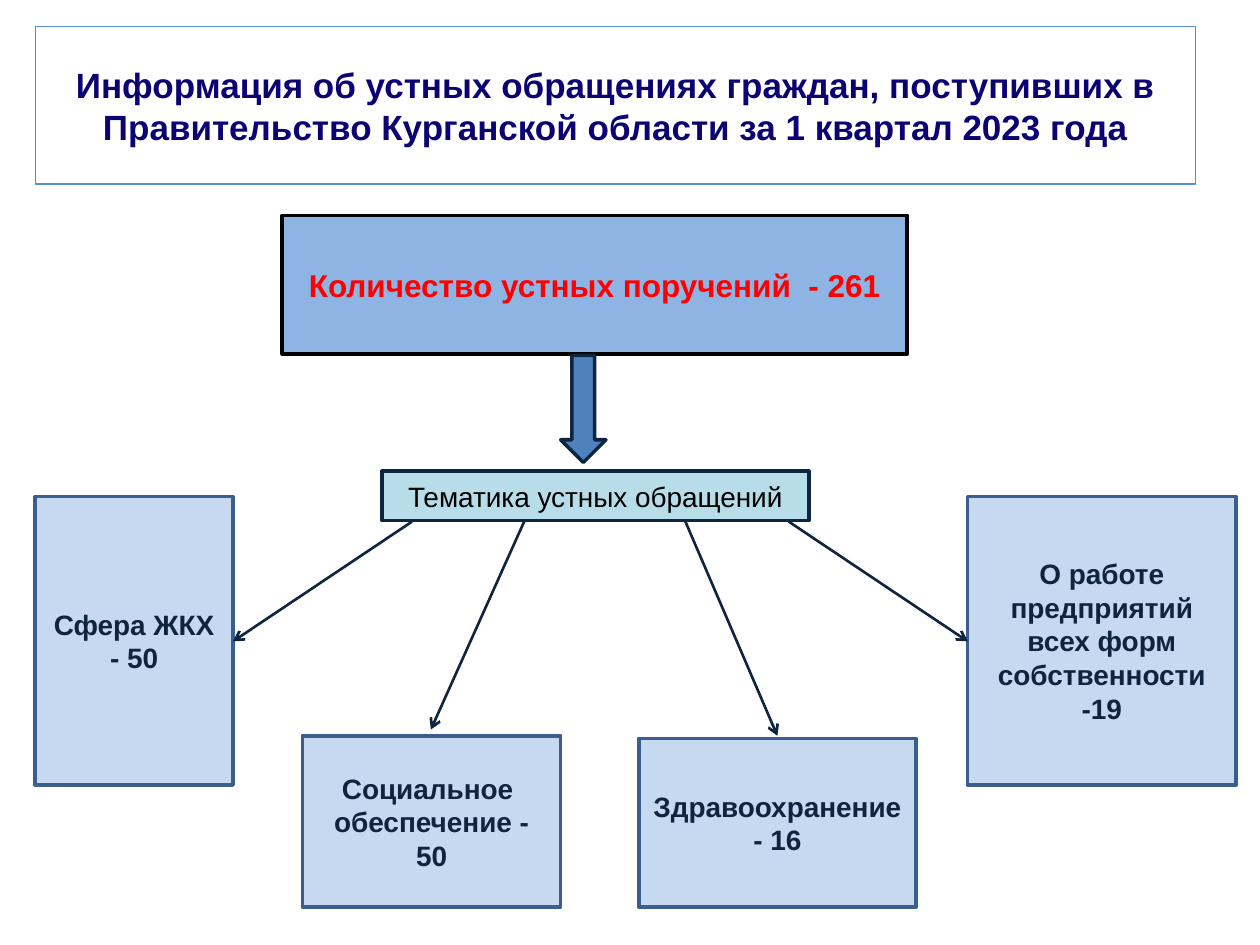
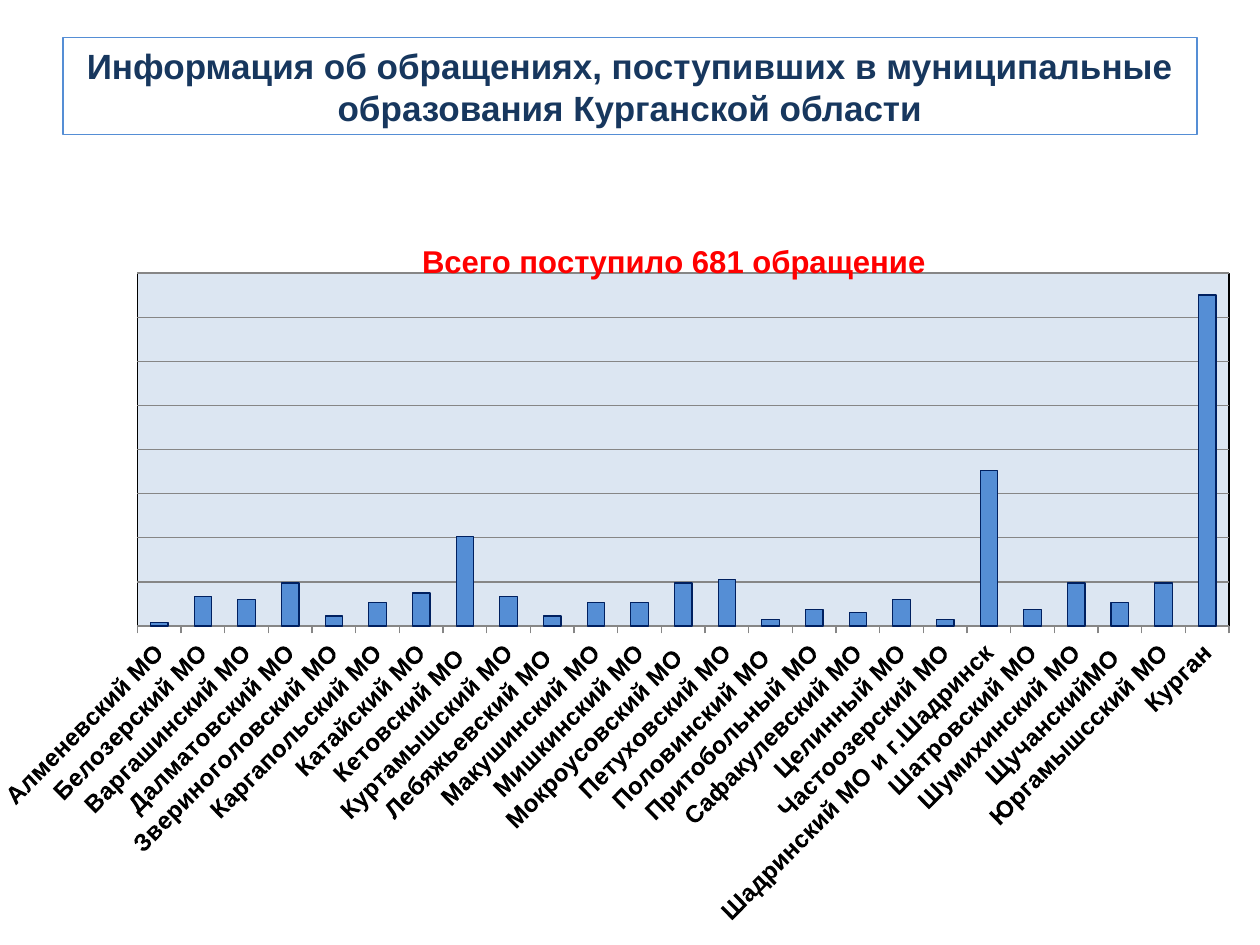
"""Build two slides on citizens' appeals in the Kurgan region."""
from dataclasses import dataclass
from typing import Optional

from pptx import Presentation
from pptx.chart.data import CategoryChartData
from pptx.dml.color import RGBColor
from pptx.enum import chart as ch, shapes, text
from pptx.oxml import parse_xml
from pptx.oxml.ns import nsdecls, qn
from pptx.util import Inches, Pt

BLACK = RGBColor(0x00, 0x00, 0x00)
RED = RGBColor(0xFF, 0x00, 0x00)
NAVY = RGBColor(0x0F, 0x24, 0x3E)
INDIGO = RGBColor(0x0B, 0x03, 0x73)
DEEP_BLUE = RGBColor(0x17, 0x37, 0x5E)
BAR_EDGE = RGBColor(0x00, 0x20, 0x60)
BLUE = RGBColor(0x55, 0x8E, 0xD5)
ARROW_BLUE = RGBColor(0x4F, 0x81, 0xBD)
TOPIC_EDGE = RGBColor(0x3A, 0x5F, 0x8C)
TOTAL_BLUE = RGBColor(0x8E, 0xB4, 0xE3)
TOPIC_BLUE = RGBColor(0xC6, 0xD9, 0xF1)
AQUA = RGBColor(0xB7, 0xDE, 0xE8)
PLOT_BLUE = RGBColor(0xDC, 0xE6, 0xF2)
GRID_GREY = RGBColor(0x86, 0x86, 0x86)
FONT = "Arial"


@dataclass(frozen=True)
class Box:
    """A bordered preset shape with optional centred text."""
    left: float
    top: float
    width: float
    height: float
    words: str = ""
    fill: Optional[RGBColor] = TOPIC_BLUE
    edge: RGBColor = TOPIC_EDGE
    edge_width: float = 2
    ink: RGBColor = NAVY
    size: float = 16
    bold: bool = True
    preset: shapes.MSO_SHAPE = shapes.MSO_SHAPE.RECTANGLE


@dataclass(frozen=True)
class Arrow:
    """A straight arrow between two points."""
    from_x: float
    from_y: float
    to_x: float
    to_y: float


TOPICS = [
    Box(0.28, 3.94, 1.57, 2.29, "Сфера ЖКХ - 50"),
    Box(2.4, 5.84, 2.05, 1.36, "Социальное  обеспечение - 50"),
    Box(5.07, 5.86, 2.2, 1.34, "Здравоохранение - 16"),
    Box(7.68, 3.94, 2.13, 2.29, "О работе предприятий всех форм собственности -19"),
]
TOTAL = Box(2.24, 1.71, 4.96, 1.1, "Количество устных поручений  - 261",
            TOTAL_BLUE, BLACK, ink=RED, size=18)
SUBJECT = Box(3.03, 3.74, 3.39, 0.39, "Тематика устных обращений",
              AQUA, NAVY, ink=BLACK, bold=False)
DOWN = Box(4.45, 2.82, 0.36, 0.85, fill=ARROW_BLUE, edge=NAVY,
           preset=shapes.MSO_SHAPE.DOWN_ARROW)
ARROWS = [
    Arrow(4.16, 4.14, 3.42, 5.79),
    Arrow(5.44, 4.14, 6.17, 5.84),
    Arrow(3.27, 4.14, 1.85, 5.09),
    Arrow(6.26, 4.14, 7.68, 5.09),
]
APPEALS = {
    "Алменевский МО": 1, "Белозерский МО": 9, "Варгашинский МО": 8,
    "Далматовский МО": 13, "Звериноголовский МО": 3, "Каргапольский МО": 7,
    "Катайский МО": 10, "Кетовский МО ": 27, "Куртамышский МО": 9,
    "Лебяжьевский МО ": 3, "Макушинский МО": 7, "Мишкинский МО": 7,
    "Мокроусовский МО ": 13, "Петуховский МО": 14, "Половинский МО ": 2,
    "Притобольный МО": 5, "Сафакулевский МО": 4, "Целинный МО": 8,
    "Частоозерский МО": 2, "Шадринский МО и г.Шадринск": 47,
    "Шатровский МО": 5, "Шумихинский МО": 13, "ЩучанскийМО ": 7,
    "Юргамышсский МО": 13, "Курган": 100,
}
GRID_STEP = 13.33
GRID_ROWS = 8


def apply(target, **values) -> None:
    """Set each named attribute on the target."""
    for name, value in values.items():
        setattr(target, name, value)


def style_font(font, size: float, ink: RGBColor, bold: bool, name: str = FONT) -> None:
    """Apply typeface, size, weight and colour."""
    apply(font, name=name, size=Pt(size), bold=bold)
    font.color.rgb = ink


def style_line(line, color: RGBColor, width: float) -> None:
    """Apply line colour and width."""
    line.color.rgb = color
    line.width = Pt(width)


def draw_box(slide, box: Box) -> None:
    """Draw a box with its text."""
    shape = slide.shapes.add_shape(
        box.preset, *map(Inches, (box.left, box.top, box.width, box.height)))
    shape.shadow.inherit = False
    style_line(shape.line, box.edge, box.edge_width)
    if box.fill is None:
        shape.fill.background()
    else:
        shape.fill.solid()
        shape.fill.fore_color.rgb = box.fill
    if box.words:
        frame = shape.text_frame
        apply(frame, word_wrap=True, vertical_anchor=text.MSO_ANCHOR.MIDDLE)
        paragraph = frame.paragraphs[0]
        paragraph.alignment = text.PP_ALIGN.CENTER
        run = paragraph.add_run()
        run.text = box.words
        style_font(run.font, box.size, box.ink, box.bold)


def draw_title(slide, words: str, ink: RGBColor, left: float, top: float,
               width: float, height: float) -> None:
    """Draw the outlined slide title."""
    draw_box(slide, Box(left, top, width, height, words, None, BLUE, 0.75, ink, 20))


def draw_arrow(slide, arrow: Arrow) -> None:
    """Draw a connector with an open arrowhead at its end."""
    ends = map(Inches, (arrow.from_x, arrow.from_y, arrow.to_x, arrow.to_y))
    connector = slide.shapes.add_connector(shapes.MSO_CONNECTOR.STRAIGHT, *ends)
    style_line(connector.line, NAVY, 1.5)
    properties = connector.element.spPr
    properties.find(qn("a:ln")).append(
        parse_xml(f'<a:tailEnd {nsdecls("a")} type="arrow"/>'))
    properties.append(parse_xml(f'<a:effectLst {nsdecls("a")}/>'))


def place(element, index: int, **values: object) -> None:
    """Give a chart part a manual layout as its child at the index."""
    for old in element.findall(qn("c:layout")):
        element.remove(old)
    settings = "".join(f'<c:{key} val="{value}"/>' for key, value in values.items())
    element.insert(index, parse_xml(
        f'<c:layout {nsdecls("c")}><c:manualLayout>{settings}</c:manualLayout></c:layout>'))


def draw_chart(slide) -> None:
    """Draw the column chart of appeals by municipality."""
    data = CategoryChartData()
    data.categories = list(APPEALS)
    data.add_series("Series 1", list(APPEALS.values()))
    chart = slide.shapes.add_chart(
        ch.XL_CHART_TYPE.COLUMN_CLUSTERED,
        *map(Inches, (0, 1.62, 9.76, 6.09)), data).chart
    apply(chart, has_legend=False, has_title=True)
    style_font(chart.font, 18, BLACK, False, "Calibri")

    heading = chart.chart_title.text_frame.paragraphs[0].add_run()
    heading.text = "Всего поступило 681 обращение "
    style_font(heading.font, 18, RED, True)

    municipalities = chart.category_axis
    municipalities.major_tick_mark = ch.XL_TICK_MARK.OUTSIDE
    style_font(municipalities.tick_labels.font, 14, BLACK, True)
    style_line(municipalities.format.line, GRID_GREY, 0.75)

    counts = chart.value_axis
    apply(counts, visible=False, has_major_gridlines=True, minimum_scale=0,
          maximum_scale=GRID_STEP * GRID_ROWS, major_unit=GRID_STEP)
    style_line(counts.major_gridlines.format.line, GRID_GREY, 0.75)

    plot = chart.plots[0]
    apply(plot, gap_width=150, vary_by_categories=False)
    bars = plot.series[0].format
    bars.fill.solid()
    bars.fill.fore_color.rgb = BLUE
    style_line(bars.line, BAR_EDGE, 0.75)

    root = chart.element.find(qn("c:chart"))
    area = root.find(qn("c:plotArea"))
    labels = area.find(qn("c:catAx")).find(qn("c:txPr")).find(qn("a:bodyPr"))
    for key, value in {"rot": "-2700000", "vert": "horz"}.items():
        labels.set(key, value)
    place(root.find(qn("c:title")), 1, xMode="edge", yMode="edge", x=0.33, y=0.04)
    place(area, 0, layoutTarget="inner", xMode="edge", yMode="edge",
          x=0.1, y=0.09, w=0.9, h=0.46)
    area.append(parse_xml(
        f'<c:spPr {nsdecls("c", "a")}>'
        f'<a:solidFill><a:srgbClr val="{PLOT_BLUE}"/></a:solidFill>'
        f'<a:ln w="9525"><a:solidFill><a:srgbClr val="{BLACK}"/></a:solidFill></a:ln>'
        '</c:spPr>'))


def main() -> None:
    """Build and save the presentation."""
    deck = Presentation()
    apply(deck, slide_width=Inches(10), slide_height=Inches(7.5))
    blank = deck.slide_layouts[6]

    oral = deck.slides.add_slide(blank)
    draw_title(oral, "Информация об устных обращениях граждан, поступивших в "
               "Правительство Курганской области за 1 квартал 2023 года",
               INDIGO, 0.28, 0.21, 9.21, 1.25)
    for box in (TOTAL, *TOPICS, SUBJECT):
        draw_box(oral, box)
    for arrow in ARROWS:
        draw_arrow(oral, arrow)
    draw_box(oral, DOWN)

    municipal = deck.slides.add_slide(blank)
    draw_title(municipal, "Информация об обращениях, поступивших в муниципальные "
               "образования Курганской области", DEEP_BLUE, 0.5, 0.3, 9, 0.77)
    draw_chart(municipal)
    deck.save("out.pptx")


if __name__ == "__main__":
    main()
